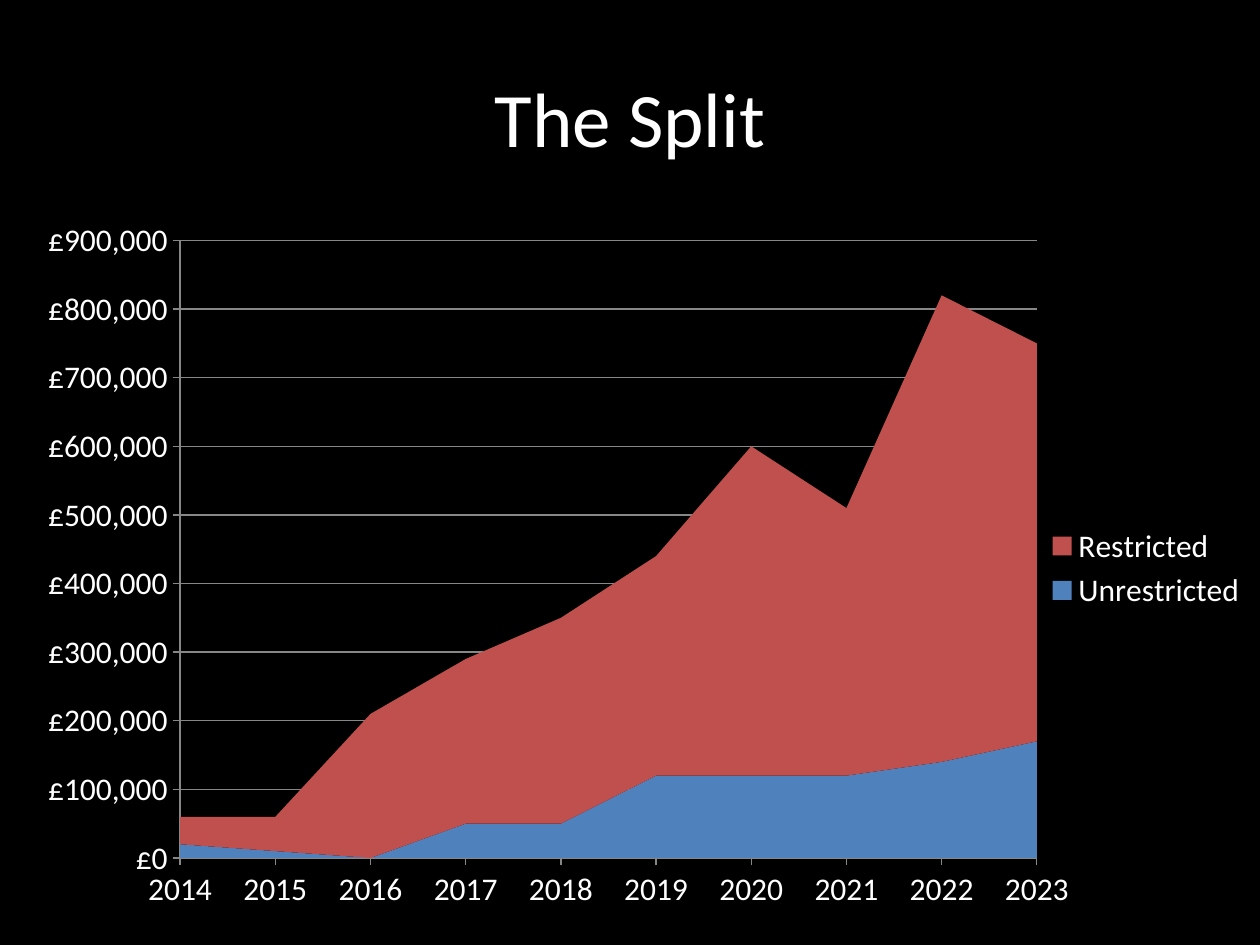
from lxml.etree import SubElement
from pptx import Presentation
from pptx.chart.data import CategoryChartData
from pptx.dml.color import RGBColor
from pptx.enum.chart import XL_CHART_TYPE as ChartType, XL_LEGEND_POSITION as LegendPosition
from pptx.enum.chart import XL_TICK_MARK as TickMark
from pptx.enum.text import MSO_ANCHOR as Anchor, PP_ALIGN as Align
from pptx.oxml.ns import qn
from pptx.util import Inches, Pt

COLORS = {
    "background": "000000",
    "text": "FFFFFF",
    "grid": "878787",
    "Unrestricted": "4F81BD",
    "Restricted": "C0504D",
}
FONT = "Calibri"


def style_font(font, size):
    font.name = FONT
    font.size = Pt(size)
    font.color.rgb = RGBColor.from_string(COLORS["text"])


prs = Presentation()
prs.slide_width, prs.slide_height = Inches(10), Inches(7.5)
slide = prs.slides.add_slide(prs.slide_layouts[6])
background = slide.background.fill
background.solid()
background.fore_color.rgb = RGBColor.from_string(COLORS["background"])

heading = slide.shapes.add_textbox(Inches(0.5), Inches(0.3), Inches(9), Inches(1.25)).text_frame
heading.word_wrap = True
heading.vertical_anchor = Anchor.MIDDLE
heading.text = "The Split"
heading.paragraphs[0].alignment = Align.CENTER
style_font(heading.paragraphs[0].runs[0].font, 44)

funds = {
    "Unrestricted": [20000, 10000, 0, 50000, 50000, 120000, 120000, 120000, 140000, 170000],
    "Restricted": [40000, 50000, 210000, 240000, 300000, 320000, 480000, 390000, 680000, 580000],
}
income = CategoryChartData(number_format='"£"#,##0')
income.categories = [str(year) for year in range(2014, 2024)]
for fund, amounts in funds.items():
    income.add_series(fund, amounts)

chart = slide.shapes.add_chart(
    ChartType.AREA_STACKED, Inches(0), Inches(1.62), Inches(10), Inches(5.78), income
).chart
style_font(chart.font, 18)
chart.has_title = False
chart.has_legend = True
chart.legend.position = LegendPosition.RIGHT
chart.legend.include_in_layout = False

for area in chart.plots[0].series:
    area.format.fill.solid()
    area.format.fill.fore_color.rgb = RGBColor.from_string(COLORS[area.name])

years, pounds = chart.category_axis, chart.value_axis
years.has_major_gridlines = False
pounds.has_major_gridlines = True
pounds.minimum_scale, pounds.maximum_scale, pounds.major_unit = 0, 900000, 100000
pounds.tick_labels.number_format = '"£"#,##0'
pounds.tick_labels.number_format_is_linked = False
for axis in (years, pounds):
    axis.major_tick_mark = TickMark.OUTSIDE
    axis.minor_tick_mark = TickMark.NONE
for part in (years, pounds, pounds.major_gridlines):
    part.format.line.color.rgb = RGBColor.from_string(COLORS["grid"])
    part.format.line.width = Pt(0.75)

plot_area = chart.plots[0]._element.getparent()
plot_area.find(qn("c:valAx")).find(qn("c:crossBetween")).set("val", "midCat")
for old_layout in plot_area.findall(qn("c:layout")):
    plot_area.remove(old_layout)
layout = SubElement(plot_area, qn("c:layout"))
plot_area.insert(0, layout)
manual = SubElement(layout, qn("c:manualLayout"))
placement = {
    "layoutTarget": "inner", "xMode": "edge", "yMode": "edge",
    "x": "0.143", "y": "0.05", "w": "0.68", "h": "0.848",
}
for tag, value in placement.items():
    SubElement(manual, qn(f"c:{tag}")).set("val", value)

prs.save("out.pptx")
